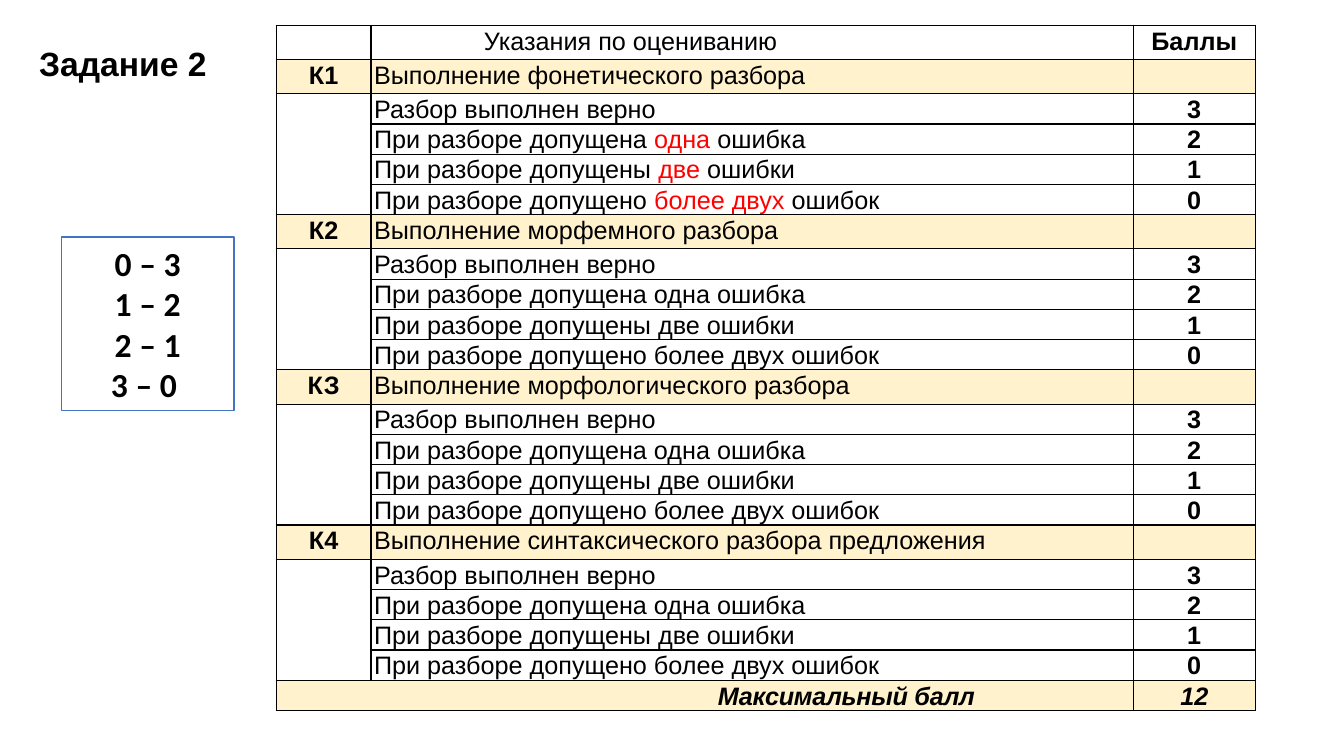
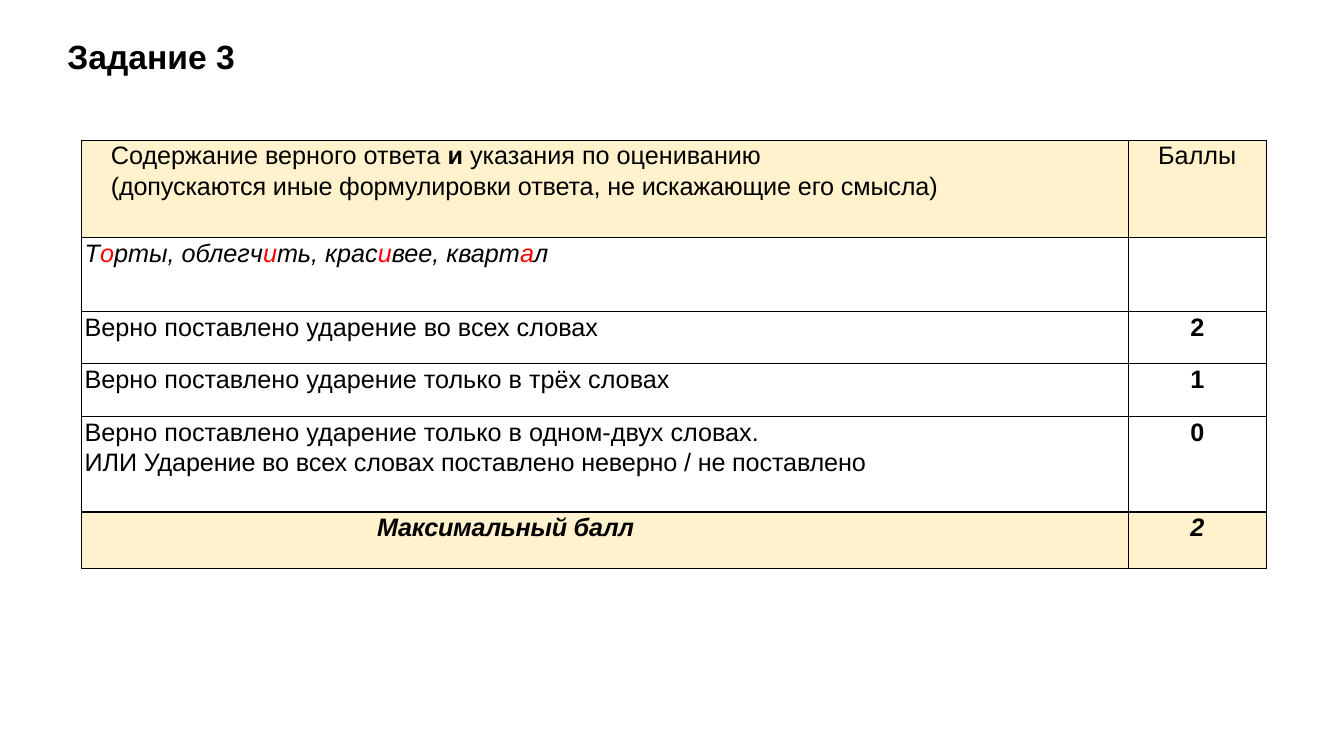
from dataclasses import dataclass

from lxml.etree import SubElement
from pptx import Presentation
from pptx.dml.color import RGBColor
from pptx.enum.shapes import MSO_SHAPE
from pptx.enum.text import PP_ALIGN
from pptx.oxml.ns import qn
from pptx.slide import Slide
from pptx.table import Table, _Cell
from pptx.text.text import TextFrame
from pptx.util import Inches, Pt

BLACK = RGBColor(0x00, 0x00, 0x00)
WHITE = RGBColor(0xFF, 0xFF, 0xFF)
RED = RGBColor(0xFF, 0x00, 0x00)
CREAM = RGBColor(0xFF, 0xF2, 0xCC)
BLUE = RGBColor(0x44, 0x72, 0xC4)


@dataclass(frozen=True)
class Run:
    text: str
    bold: bool = False
    italic: bool = False
    color: RGBColor = BLACK
    space: float = 0


@dataclass(frozen=True)
class Line:
    runs: tuple[Run, ...]
    center: bool = False
    indent: float = 0


@dataclass(frozen=True)
class Cell:
    lines: tuple[Line, ...] = ()
    fill: RGBColor = WHITE


@dataclass(frozen=True)
class Row:
    height: float
    cells: tuple[Cell, ...]


def plain(*texts: str, fill: RGBColor = WHITE) -> Cell:
    return Cell(tuple(Line((Run(text),)) for text in texts), fill)


def mid(text: str, fill: RGBColor = WHITE, bold: bool = True, italic: bool = False) -> Cell:
    return Cell((Line((Run(text, bold, italic),), center=True),), fill)


def total(indent: float, center: bool) -> Cell:
    label = Run("Максимальный балл", True, True, space=-0.2)
    return Cell((Line((label,), center, indent),), CREAM)


def marked(*texts: str, italic: bool = False) -> Cell:
    runs = tuple(
        Run(text, italic=italic, color=RED if spot % 2 else BLACK)
        for spot, text in enumerate(texts)
    )
    return Cell((Line(runs),))


def write(frame: TextFrame, lines: tuple[Line, ...], size: float, font: str,
          spacing: float = 1) -> None:
    for spot, line in enumerate(lines):
        para = frame.add_paragraph() if spot else frame.paragraphs[0]
        para.alignment = PP_ALIGN.CENTER if line.center else PP_ALIGN.LEFT
        para.line_spacing = spacing
        if line.indent:
            props = para._p.get_or_add_pPr()
            props.set("marL", str(Inches(line.indent)))
            props.set("indent", "0")
        for item in line.runs:
            run = para.add_run()
            run.text = item.text
            run.font.name = font
            run.font.size = Pt(size)
            run.font.bold = item.bold
            run.font.italic = item.italic
            run.font.color.rgb = item.color
            if item.space:
                run._r.get_or_add_rPr().set("spc", str(round(item.space * 100)))


def border(cell: _Cell) -> None:
    props = cell._tc.get_or_add_tcPr()
    for side in ("a:lnL", "a:lnR", "a:lnT", "a:lnB"):
        edge = SubElement(props, qn(side), w=str(Pt(1)))
        fill = SubElement(edge, qn("a:solidFill"))
        SubElement(fill, qn("a:srgbClr"), val=str(BLACK))


def add_grid(slide: Slide, left: float, top: float, widths: tuple[float, ...],
             rows: list[Row]) -> Table:
    frame = slide.shapes.add_table(
        len(rows), len(widths), Inches(left), Inches(top),
        Inches(sum(widths)), Inches(sum(row.height for row in rows)),
    )
    table = frame.table
    table.first_row = False
    table.horz_banding = False
    for column, width in zip(table.columns, widths):
        column.width = Inches(width)
    for y, row in enumerate(rows):
        table.rows[y].height = Inches(row.height)
        for x, data in enumerate(row.cells):
            cell = table.cell(y, x)
            cell.margin_left = cell.margin_right = Inches(0.03)
            cell.margin_top = cell.margin_bottom = 0
            border(cell)
            cell.fill.solid()
            cell.fill.fore_color.rgb = data.fill
            write(cell.text_frame, data.lines, 18, "Arial", 1.07)
    return table


def add_title(slide: Slide, text: str, left: float, top: float, width: float) -> None:
    box = slide.shapes.add_textbox(Inches(left), Inches(top), Inches(width), Inches(0.5))
    box.text_frame.word_wrap = True
    write(box.text_frame, (Line((Run(text, bold=True),)),), 24, "Arial")


def add_scale(slide: Slide) -> None:
    box = slide.shapes.add_shape(
        MSO_SHAPE.RECTANGLE, Inches(0.61), Inches(2.35), Inches(1.71), Inches(1.72)
    )
    box.shadow.inherit = False
    box.fill.solid()
    box.fill.fore_color.rgb = WHITE
    box.line.color.rgb = BLUE
    box.line.width = Pt(1)
    texts = ("0 – 3", "1 – 2", "2 – 1", "3 – 0 ")
    lines = tuple(Line((Run(text, bold=True),), center=True) for text in texts)
    write(box.text_frame, lines, 24, "Calibri")


def parsing(slide: Slide) -> None:
    tasks = (
        ("К1", "фонетического разбора"),
        ("К2", "морфемного разбора"),
        ("КЗ", "морфологического разбора"),
        ("К4", "синтаксического разбора предложения"),
    )
    faults = (
        ("При разборе допущена ", "одна", " ошибка"),
        ("При разборе допущены ", "две", " ошибки"),
        ("При разборе допущено ", "более двух ", "ошибок"),
    )
    head = Cell((Line((Run("Указания по оцениванию"),), indent=1.09),))
    rows = [Row(0.34, (Cell(), head, mid("Баллы")))]
    for spot, (code, name) in enumerate(tasks):
        title = plain(f"Выполнение {name}", fill=CREAM)
        rows.append(Row(0.34, (mid(code, CREAM), title, Cell(fill=CREAM))))
        levels = [plain("Разбор выполнен верно")]
        levels += [plain("".join(parts)) if spot else marked(*parts) for parts in faults]
        for lost, level in enumerate(levels):
            rows.append(Row(0.3, (Cell(), level, mid(str(3 - lost)))))
    rows.append(Row(0.3, (total(2.81, True), Cell(fill=CREAM), mid("12", CREAM, italic=True))))

    table = add_grid(slide, 2.74, 0.25, (0.94, 7.56, 1.21), rows)
    for spot in range(len(tasks)):
        top = 2 + 5 * spot
        table.cell(top, 0).merge(table.cell(top + 3, 0))
    last = len(rows) - 1
    table.cell(last, 0).merge(table.cell(last, 1))
    add_title(slide, "Задание 2", 0.29, 0.38, 2.22)
    add_scale(slide)


def stress(slide: Slide) -> None:
    head = Cell((
        Line((
            Run("Содержание верного ответа "),
            Run("и ", bold=True),
            Run("указания по оцениванию"),
        ), indent=0.26),
        Line((
            Run("(допускаются иные формулировки ответа, не искажающие его смысла)", space=-0.1),
        ), indent=0.26),
    ), CREAM)
    words = marked("Т", "о", "рты, облегч", "и", "ть, крас", "и", "вее, кварт", "а", "л",
                   italic=True)
    wrong = Cell((
        Line((Run("Верно поставлено ударение только в одном-двух словах."),)),
        Line((
            Run("ИЛИ Ударение во всех словах поставлено неверно / не поставлено", space=-0.1),
        )),
    ))
    rows = [
        Row(0.97, (head, mid("Баллы", CREAM, bold=False))),
        Row(0.73, (words, Cell())),
        Row(0.52, (plain("Верно поставлено ударение во всех словах"), mid("2"))),
        Row(0.52, (plain("Верно поставлено ударение только в трёх словах"), mid("1"))),
        Row(0.95, (wrong, mid("0"))),
        Row(0.56, (total(2.9, False), mid("2", CREAM, italic=True))),
    ]
    add_grid(slide, 0.81, 1.39, (10.38, 1.37), rows)
    add_title(slide, "Задание 3", 0.57, 0.31, 2.38)


def main() -> None:
    deck = Presentation()
    deck.slide_width = Inches(13.33)
    deck.slide_height = Inches(7.5)
    for draw in (parsing, stress):
        draw(deck.slides.add_slide(deck.slide_layouts[6]))
    deck.save("out.pptx")


if __name__ == "__main__":
    main()
